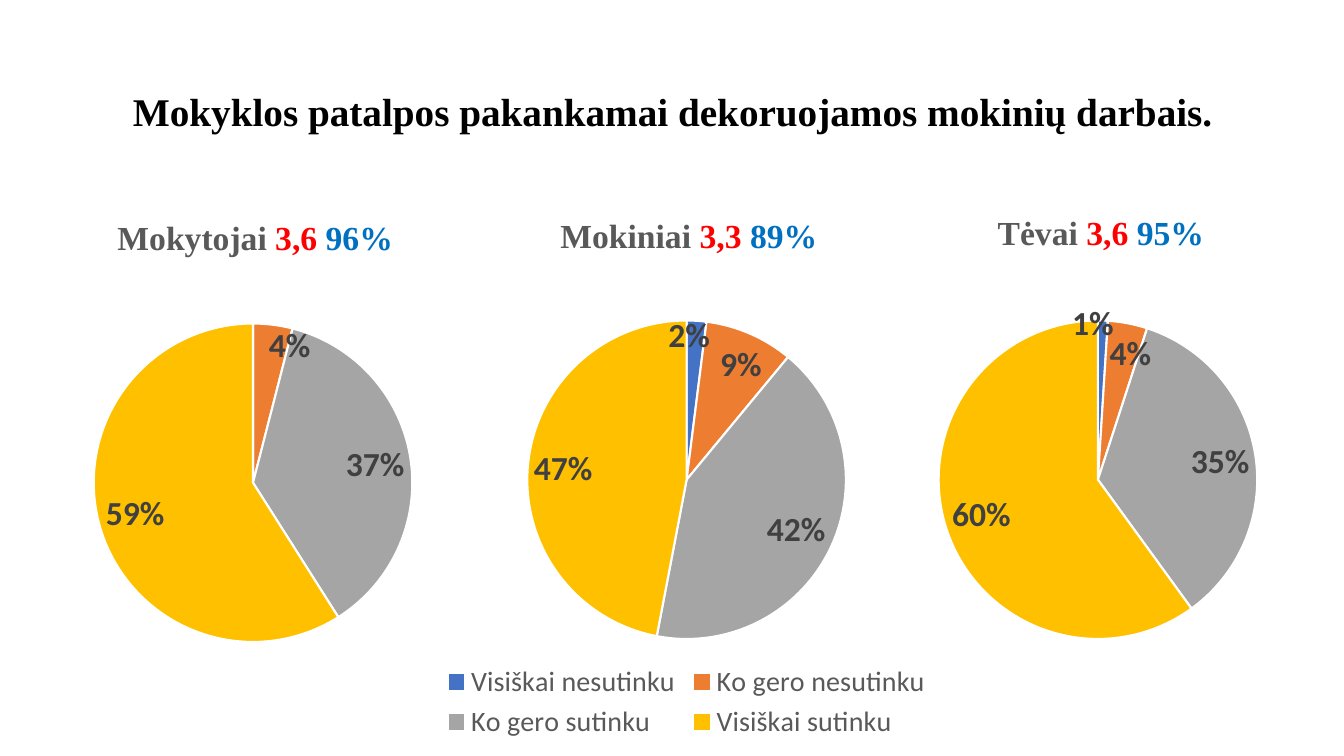
from lxml import etree
from pptx import Presentation
from pptx.chart.data import CategoryChartData
from pptx.dml.color import RGBColor
from pptx.enum.chart import XL_CHART_TYPE, XL_LABEL_POSITION, XL_LEGEND_POSITION
from pptx.enum.text import MSO_ANCHOR, PP_ALIGN
from pptx.oxml.ns import qn
from pptx.util import Inches, Pt

PIE = XL_CHART_TYPE.PIE
INSIDE_END = XL_LABEL_POSITION.INSIDE_END
BOTTOM = XL_LEGEND_POSITION.BOTTOM
MIDDLE = MSO_ANCHOR.MIDDLE
CENTER = PP_ALIGN.CENTER

BLACK = RGBColor(0x00, 0x00, 0x00)
WHITE = RGBColor(0xFF, 0xFF, 0xFF)
GRAY = RGBColor(0x59, 0x59, 0x59)
DARK_GRAY = RGBColor(0x40, 0x40, 0x40)
RED = RGBColor(0xFF, 0x00, 0x00)
BLUE = RGBColor(0x00, 0x70, 0xC0)
SLICE_COLORS = (RGBColor(0x44, 0x72, 0xC4), RGBColor(0xED, 0x7D, 0x31),
                RGBColor(0xA5, 0xA5, 0xA5), RGBColor(0xFF, 0xC0, 0x00))

SERIF = "Times New Roman"
SANS = "Calibri"
SLIDE_WIDTH, SLIDE_HEIGHT = 13.33, 7.5
RADIUS = 1.58
NUMBERS = ("1", "2", "3", "4")
ANSWERS = ("Visiškai nesutinku", "Ko gero nesutinku",
           "Ko gero sutinku", "Visiškai sutinku")


def format_font(font, size, color, name=SANS, bold=False):
    """Set the size, colour, face and weight of a font."""
    font.size, font.name, font.bold = Pt(size), name, bold
    font.color.rgb = color


def add_span(para, text, **style):
    """Append formatted text to a paragraph."""
    span = para.add_run()
    span.text = text
    format_font(span.font, **style)


def set_layout(parent, index, **settings):
    """Give a chart part a manual layout at the given child index."""
    for old in parent.findall(qn("c:layout")):
        parent.remove(old)
    layout = etree.Element(qn("c:layout"))
    manual = etree.SubElement(layout, qn("c:manualLayout"))
    for name, value in settings.items():
        etree.SubElement(manual, qn(f"c:{name}")).set("val", str(value))
    parent.insert(index, layout)


def add_heading(page, text):
    """Place and format the slide title."""
    title = page.shapes.title
    title.left, title.top = Inches(0.92), Inches(0.4)
    title.width, title.height = Inches(11.5), Inches(1.45)
    title.text_frame.vertical_anchor = MIDDLE
    para = title.text_frame.paragraphs[0]
    para.alignment, para.line_spacing = CENTER, 0.9
    add_span(para, text, size=28, color=BLACK, name=SERIF, bold=True)


def add_chart_title(chart, group, score, share, left):
    """Write the group, its score and its share above a pie."""
    para = chart.chart_title.text_frame.paragraphs[0]
    for text, color in ((f"{group} ", GRAY), (f"{score} ", RED), (share, BLUE)):
        add_span(para, text, size=24, color=color, name=SERIF, bold=True)
    set_layout(chart.element.find(".//" + qn("c:title")), 1,
               xMode="edge", yMode="edge", x=left, y=0.03)


def format_slices(series):
    """Colour the slices and outline them in white."""
    for index, color in enumerate(SLICE_COLORS):
        slice_format = series.points[index].format
        slice_format.fill.solid()
        slice_format.fill.fore_color.rgb = color
        slice_format.line.color.rgb = WHITE
        slice_format.line.width = Pt(1.5)


def format_labels(chart, series, values, shifts):
    """Show percentages, shift each label and remove those of zero."""
    labels = series.data_labels
    labels.show_value = True
    labels.number_format, labels.number_format_is_linked = "0%", False
    labels.position = INSIDE_END
    format_font(labels.font, 24, DARK_GRAY, bold=True)
    for index, (across, down) in enumerate(shifts):
        label = series.points[index].data_label
        format_font(label.font, 24, DARK_GRAY, bold=True)
        label.position = INSIDE_END
        element = next(item for item in chart.element.iter(qn("c:dLbl"))
                       if item.find(qn("c:idx")).get("val") == str(index))
        if values[index]:
            set_layout(element, 1, x=across, y=down)
        else:
            for child in list(element)[1:]:
                element.remove(child)
            etree.SubElement(element, qn("c:delete")).set("val", "1")


def add_pie(page, frame, center, values, heading, shifts, categories=NUMBERS,
            legend=False):
    """Add one pie chart with its title, labels and optional legend."""
    left, top, width, height = frame
    data = CategoryChartData(number_format="0%")
    data.categories = categories
    data.add_series("Series 1", values)
    chart = page.shapes.add_chart(PIE, *map(Inches, frame), data).chart
    format_font(chart.font, 10, BLACK)
    add_chart_title(chart, *heading)
    chart.has_legend = legend
    if legend:
        chart.legend.position = BOTTOM
        chart.legend.include_in_layout = False
        format_font(chart.legend.font, 20, GRAY)
    plot = chart.plots[0]
    plot.vary_by_categories = True
    format_slices(plot.series[0])
    format_labels(chart, plot.series[0], values, shifts)
    set_layout(chart.element.find(".//" + qn("c:plotArea")), 0,
               layoutTarget="inner", xMode="edge", yMode="edge",
               x=round((center[0] - RADIUS - left) / width, 4),
               y=round((center[1] - RADIUS - top) / height, 4),
               w=round(2 * RADIUS / width, 4),
               h=round(2 * RADIUS / height, 4))


def main():
    """Build the slide with three survey pies."""
    deck = Presentation()
    deck.slide_width, deck.slide_height = Inches(SLIDE_WIDTH), Inches(SLIDE_HEIGHT)
    page = deck.slides.add_slide(deck.slide_layouts[5])
    add_heading(page, "Mokyklos patalpos pakankamai dekoruojamos mokinių darbais.")
    add_pie(page, (0.14, 2, 4.74, 4.52), (2.51, 4.79), (0, 0.04, 0.37, 0.59),
            ("Mokytojai", "3,6", "96%", 0.21),
            ((0, 0), (0.08, -0.01), (0, -0.03), (0, 0.02)))
    add_pie(page, (3.25, 1.95, 7.12, 5.44), (6.81, 4.76), (0.02, 0.09, 0.42, 0.47),
            ("Mokiniai", "3,3", "89%", 0.32),
            ((-0.01, -0.02), (0.02, 0.01), (0, 0.01), (0, -0.03)),
            categories=ANSWERS, legend=True)
    add_pie(page, (8.45, 1.95, 4.88, 4.52), (10.89, 4.76), (0.01, 0.04, 0.35, 0.6),
            ("Tėvai", "3,6", "95%", 0.29),
            ((-0.02, -0.05), (0.05, 0.01), (0, -0.03), (0, 0.02)))
    deck.save("out.pptx")


if __name__ == "__main__":
    main()
